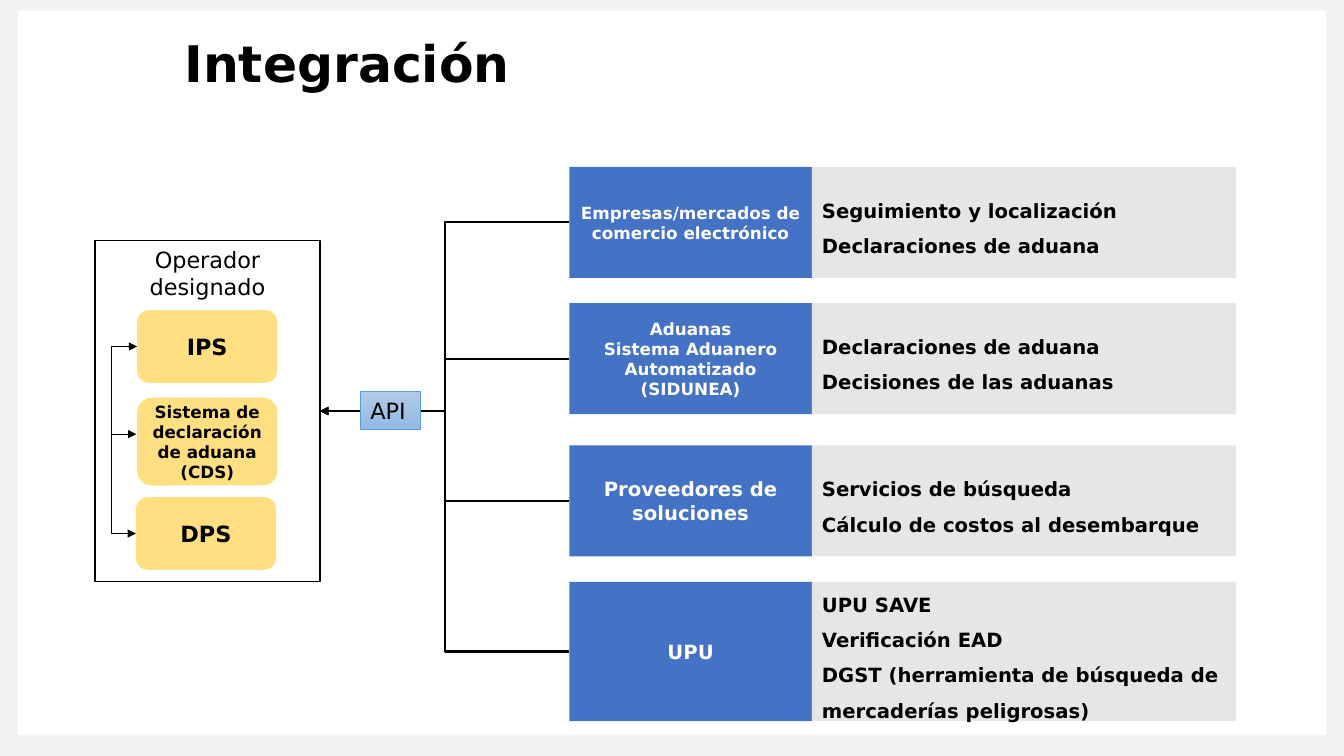
from lxml import etree
from pptx import Presentation
from pptx.dml.color import RGBColor
from pptx.enum import shapes, text
from pptx.oxml import ns
from pptx.util import Pt

COLORS = {
    "frame": "F2F2F2", "white": "FFFFFF", "black": "000000",
    "system": "FFC000", "partner": "4472C4", "detail": "E7E6E6",
    "api_top": "B1CBE9", "api_bottom": "93B9E4", "api_line": "5B9BD5",
}
CENTER, LEFT = text.PP_ALIGN.CENTER, text.PP_ALIGN.LEFT
TOP, MIDDLE = text.MSO_ANCHOR.TOP, text.MSO_ANCHOR.MIDDLE
RECT, ROUNDED = shapes.MSO_SHAPE.RECTANGLE, shapes.MSO_SHAPE.ROUNDED_RECTANGLE
STRAIGHT, ELBOW = shapes.MSO_CONNECTOR.STRAIGHT, shapes.MSO_CONNECTOR.ELBOW


def rgb(name):
    return RGBColor.from_string(COLORS[name])


class Board:
    """Holds the slide and its style."""

    font = "DejaVu Sans"

    def __init__(self, slide):
        self.slide = slide

    def set_text(self, shape, lines, size, color="black", bold=True,
                 align=CENTER, anchor=MIDDLE, spacing=None):
        frame = shape.text_frame
        frame.text = "\n".join(lines)
        frame.word_wrap = True
        frame.vertical_anchor = anchor
        for paragraph in frame.paragraphs:
            paragraph.alignment = align
            paragraph.line_spacing = spacing
            for run in paragraph.runs:
                run.font.name = self.font
                run.font.size = Pt(size)
                run.font.bold = bold
                run.font.color.rgb = rgb(color)

    def box(self, left, top, width, height, fill, kind=RECT,
            line=None, line_width=1, alpha=None):
        shape = self.slide.shapes.add_shape(
            kind, Pt(left), Pt(top), Pt(width), Pt(height))
        shape.shadow.inherit = False
        shape.fill.solid()
        shape.fill.fore_color.rgb = rgb(fill)
        if alpha:
            color = shape._element.spPr.find(".//" + ns.qn("a:srgbClr"))
            etree.SubElement(color, ns.qn("a:alpha"), val=str(alpha * 1000))
        if line:
            shape.line.color.rgb = rgb(line)
            shape.line.width = Pt(line_width)
        else:
            shape.line.fill.background()
        return shape

    def label(self, left, top, width, height, lines, size, **style):
        shape = self.slide.shapes.add_textbox(
            Pt(left), Pt(top), Pt(width), Pt(height))
        self.set_text(shape, lines, size, **style)
        return shape

    def arrow(self, kind, width, start=(0, 0), end=(0, 0),
              source=None, target=None, both=False, bend=None):
        """Sources and targets are (shape, connection site) pairs."""
        link = self.slide.shapes.add_connector(
            kind, *(Pt(v) for v in (*start, *end)))
        if source:
            link.begin_connect(*source)
        if target:
            link.end_connect(*target)
        link.line.color.rgb = rgb("black")
        link.line.width = Pt(width)
        properties = link._element.spPr
        line = properties.find(ns.qn("a:ln"))
        for tag in ("a:headEnd", "a:tailEnd") if both else ("a:tailEnd",):
            etree.SubElement(line, ns.qn(tag), type="triangle")
        etree.SubElement(properties, ns.qn("a:effectLst"))
        if bend is not None:
            guides = properties.find(".//" + ns.qn("a:avLst"))
            etree.SubElement(guides, ns.qn("a:gd"), name="adj1",
                             fmla=f"val {round(bend * 100000)}")
        return link


def main():
    deck = Presentation()
    deck.slide_width, deck.slide_height = Pt(960), Pt(540)
    board = Board(deck.slides.add_slide(deck.slide_layouts[6]))

    # Page frame
    board.box(0, 0, 960, 540, "frame")
    board.box(12.8, 7.8, 934.4, 517.6, "white")

    # Designated operator and its systems
    operator = board.box(67.9, 172, 160.7, 243.2, "white", line="black")
    systems = []
    for name, size, left, top, height in (
        ("IPS", 16, 98, 221.5, 52),
        ("Sistema de declaración de aduana (CDS)", 12, 98, 284, 62.8),
        ("DPS", 16, 97.1, 355.1, 52),
    ):
        system = board.box(left, top, 100.1, height, "system", ROUNDED, alpha=50)
        board.set_text(system, [name], size)
        systems.append(system)
    ips, cds, dps = systems

    # Links between the systems
    bus = 79.4
    board.arrow(ELBOW, 0.5, source=(ips, 1), target=(dps, 1), both=True,
                bend=(ips.left - Pt(bus)) / (ips.left - dps.left))
    board.arrow(STRAIGHT, 0.5, (bus, 310.1), (97.4, 310.1))
    heading = board.label(67.9, 172, 160.7, 46, ["Operador", "designado"], 16,
                          bold=False, anchor=TOP)
    heading.text_frame.auto_size = text.MSO_AUTO_SIZE.SHAPE_TO_FIT_TEXT

    # Partners and their services
    partners = []
    for top, height, size, names, services in (
        (119.3, 79.2, 12, ["Empresas/mercados de comercio electrónico"],
         ["Seguimiento y localización", "Declaraciones de aduana"]),
        (216.6, 79.2, 12, ["Aduanas", "Sistema Aduanero Automatizado (SIDUNEA)"],
         ["Declaraciones de aduana", "Decisiones de las aduanas"]),
        (318.2, 79.2, 14, ["Proveedores de soluciones"],
         ["Servicios de búsqueda", "Cálculo de costos al desembarque"]),
        (415.6, 99.6, 14, ["UPU"],
         ["UPU SAVE", "Verificación EAD",
          "DGST (herramienta de búsqueda de mercaderías peligrosas)"]),
    ):
        partner = board.box(406.7, top, 173.3, height, "partner")
        board.set_text(partner, names, size, "white")
        detail = board.box(580, top, 303, height, "detail")
        board.set_text(detail, services, 14, align=LEFT, spacing=1.5)
        partners.append(partner)

    # Partners feed the operator through the API
    for partner in partners:
        board.arrow(ELBOW, 1.5, source=(partner, 1), target=(operator, 3))
    api = board.box(257.5, 279.8, 42.7, 26.8, "white",
                    line="api_line", line_width=0.5)
    api.fill.gradient()
    api.fill.gradient_angle = 270
    for stop, color in zip(api.fill.gradient_stops, ("api_top", "api_bottom")):
        stop.color.rgb = rgb(color)
    board.set_text(api, ["API"], 16, bold=False, align=LEFT, anchor=TOP)
    api.text_frame.word_wrap = False
    api.text_frame.auto_size = text.MSO_AUTO_SIZE.SHAPE_TO_FIT_TEXT

    # Title
    board.label(124.6, 24.5, 705.6, 45.4, ["Integración"], 36,
                align=LEFT, spacing=0.9)

    deck.save("out.pptx")


if __name__ == "__main__":
    main()
